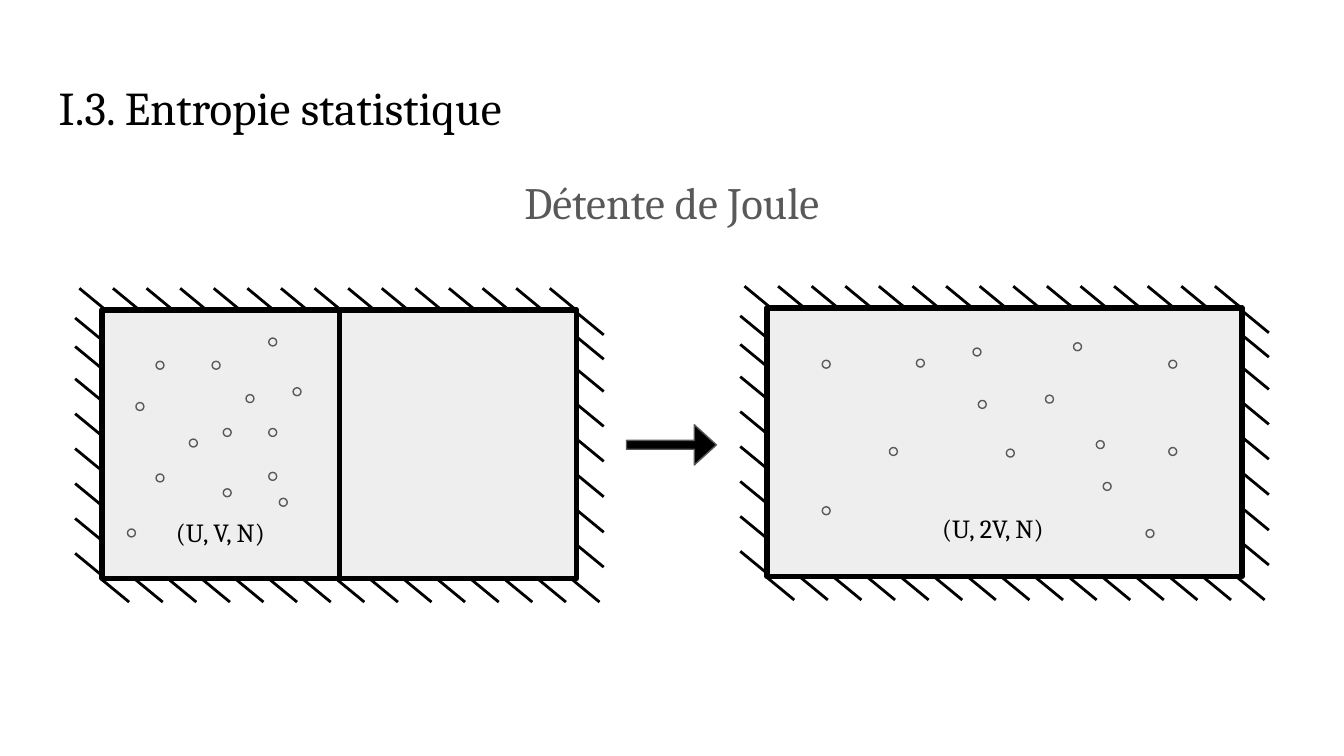
from lxml import etree
from pptx import Presentation
from pptx.dml.color import RGBColor
from pptx.enum.shapes import MSO_CONNECTOR, MSO_SHAPE
from pptx.enum.text import MSO_ANCHOR, MSO_AUTO_SIZE, PP_ALIGN
from pptx.oxml.ns import qn
from pptx.util import Cm, Pt

RECTANGLE, OVAL, ARROW = MSO_SHAPE.RECTANGLE, MSO_SHAPE.OVAL, MSO_SHAPE.RIGHT_ARROW
STRAIGHT = MSO_CONNECTOR.STRAIGHT
LEFT, CENTER = PP_ALIGN.LEFT, PP_ALIGN.CENTER
TOP, NO_FIT = MSO_ANCHOR.TOP, MSO_AUTO_SIZE.NONE

# Content: all lengths in cm, particles and labels relative to their container
FONT = "Cambria"
COLORS = {"black": "000000", "gray": "595959", "gas": "EEEEEE"}
TITLE = "I.3. Entropie statistique"
SUBTITLE = "Détente de Joule"
CONTAINERS = [
    {
        "corner": (1.93, 5.86), "partition": True,
        "label": "(U, V, N)", "label_at": (0.61, 3.66),
        "particles": [
            (1.02, 0.97), (0.64, 1.75), (1.65, 2.44), (2.29, 2.24), (3.61, 1.47),
            (3.15, 3.07), (3.15, 2.24), (2.29, 3.38), (3.35, 3.56), (2.08, 0.97),
            (1.02, 3.1), (2.72, 1.6), (3.15, 0.53), (0.48, 4.14),
        ],
    },
    {
        "corner": (14.5, 5.82), "partition": False,
        "label": "(U, 2V, N)", "label_at": (2.64, 3.61),
        "particles": [
            (1.04, 3.76), (2.82, 0.97), (1.04, 0.99), (2.31, 2.64), (3.99, 1.75),
            (4.52, 2.67), (5.79, 0.66), (7.59, 0.99), (7.59, 2.64), (3.89, 0.76),
            (5.26, 1.65), (6.22, 2.51), (6.35, 3.3), (7.16, 4.19),
        ],
    },
]

# Geometry shared by both containers
WIDTH, HEIGHT = 8.97, 5.08
PARTICLE = 0.15
HATCH_W, HATCH_H = 0.51, 0.42
HATCH_COUNT, HATCH_SPAN = 15, 8.89
LEFT_HATCHES = (0.15, 0.69, 1.3, 1.96, 2.62, 3.28, 3.94, 4.6)
RIGHT_HATCHES = (0.05, 0.51, 1.12, 1.78, 2.44, 3.11, 3.78, 4.44)


def color(name):
    return RGBColor.from_string(COLORS[name])


def write(box, text, size, ink, align):
    frame = box.text_frame
    frame.word_wrap = True
    frame.auto_size = NO_FIT
    frame.vertical_anchor = TOP
    frame.margin_left = frame.margin_right = Cm(0.25)
    frame.margin_top = frame.margin_bottom = Cm(0.25)
    para = frame.paragraphs[0]
    para.text = text
    para.alignment = align
    para.font.name = FONT
    para.font.size = Pt(size)
    para.font.color.rgb = color(ink)


def add_text(page, x, y, width, height, *style):
    box = page.shapes.add_textbox(Cm(x), Cm(y), Cm(width), Cm(height))
    write(box, *style)


def add_shape(page, kind, x, y, width, height, fill, ink, weight):
    shape = page.shapes.add_shape(kind, Cm(x), Cm(y), Cm(width), Cm(height))
    shape.shadow.inherit = False
    shape.fill.solid()
    shape.fill.fore_color.rgb = color(fill)
    shape.line.color.rgb = color(ink)
    shape.line.width = Pt(weight)
    return shape


def add_line(page, x, y, dx, dy, weight):
    line = page.shapes.add_connector(STRAIGHT, Cm(x), Cm(y), Cm(x + dx), Cm(y + dy))
    line.line.color.rgb = color("black")
    line.line.width = Pt(weight)
    etree.SubElement(line._element.spPr, qn("a:effectLst"))


def hatch_starts():
    step = HATCH_SPAN / (HATCH_COUNT - 1)
    for i in range(HATCH_COUNT):
        yield WIDTH - HATCH_W - HATCH_SPAN + i * step, -0.41
        yield i * step, HEIGHT + 0.02
    for y in LEFT_HATCHES:
        yield -HATCH_W, y
    for y in RIGHT_HATCHES:
        yield WIDTH, y


def add_container(page, container):
    left, top = container["corner"]
    add_shape(page, RECTANGLE, left, top, WIDTH, HEIGHT, "gas", "black", 3)
    if container["partition"]:
        add_line(page, left + WIDTH / 2, top, 0, HEIGHT, 3)
    # Hatched insulating walls
    for x, y in hatch_starts():
        add_line(page, left + x, top + y, HATCH_W, HATCH_H, 1.5)
    # State label and gas particles
    x, y = container["label_at"]
    add_text(page, left + x, top + y, 3.25, 1.12, container["label"], 14, "black", CENTER)
    for x, y in container["particles"]:
        add_shape(page, OVAL, left + x, top + y, PARTICLE, PARTICLE, "gas", "gray", 0.75)


def main():
    deck = Presentation()
    deck.slide_width, deck.slide_height = Cm(25.4), Cm(14.29)
    page = deck.slides.add_slide(deck.slide_layouts[5])

    # Title and subtitle
    title = page.shapes.title
    title.left, title.top, title.width, title.height = Cm(0.86), Cm(1.24), Cm(23.67), Cm(1.6)
    write(title, TITLE, 25.2, "black", LEFT)
    add_text(page, 0.86, 3.05, 23.67, 1.8, SUBTITLE, 24, "gray", CENTER)

    # Gas before and after the expansion
    for container in CONTAINERS:
        add_container(page, container)
    arrow = add_shape(page, ARROW, 11.84, 8.03, 1.7, 0.76, "black", "gray", 0.75)
    arrow.adjustments[0], arrow.adjustments[1] = 0.22, 0.55

    deck.save("out.pptx")


if __name__ == "__main__":
    main()
